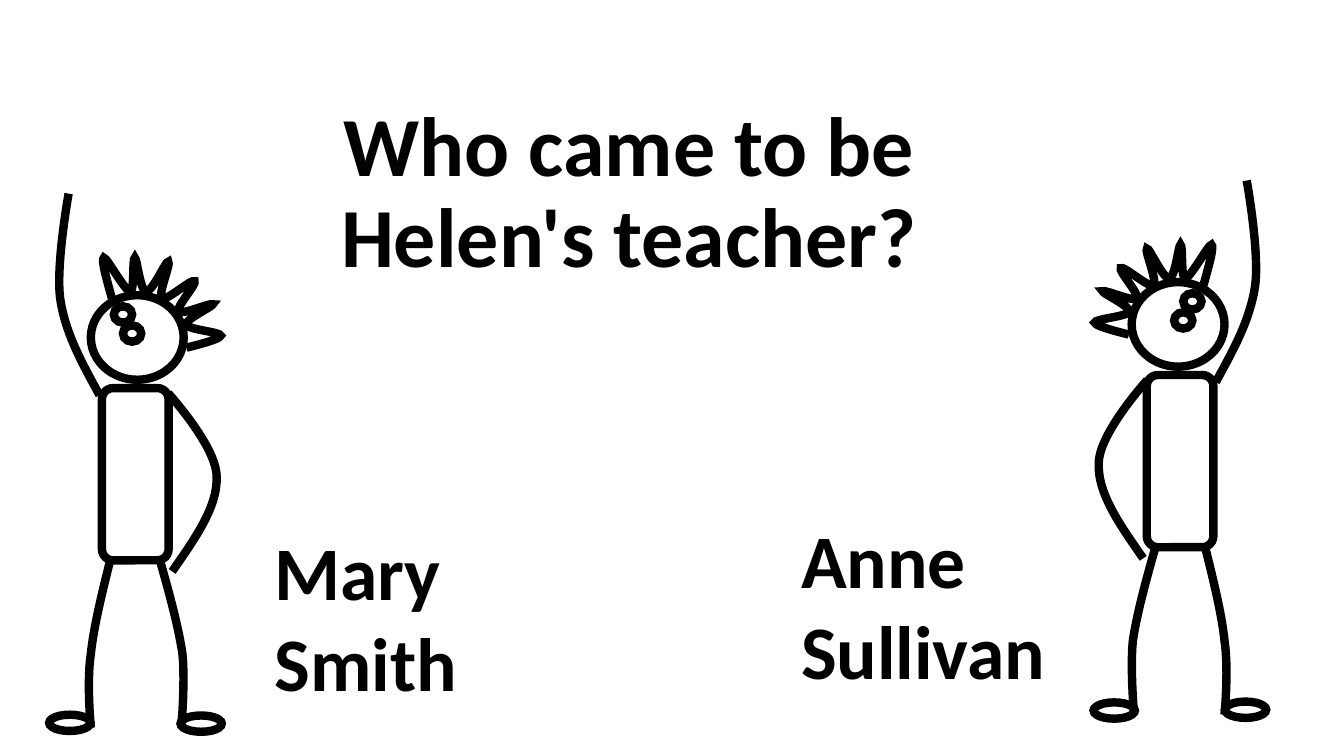
from dataclasses import dataclass

from lxml import etree
from pptx import Presentation
from pptx.dml.color import RGBColor
from pptx.enum.shapes import MSO_SHAPE
from pptx.enum.text import MSO_ANCHOR, MSO_AUTO_SIZE, PP_ALIGN
from pptx.oxml.ns import qn
from pptx.util import Cm, Pt

ELLIPSE, ROUNDED = MSO_SHAPE.OVAL, MSO_SHAPE.ROUNDED_RECTANGLE
CENTER, LEFT = PP_ALIGN.CENTER, PP_ALIGN.LEFT
MIDDLE = MSO_ANCHOR.MIDDLE
NO_FIT, GROW = MSO_AUTO_SIZE.NONE, MSO_AUTO_SIZE.SHAPE_TO_FIT_TEXT


@dataclass(frozen=True)
class Theme:
    ink: RGBColor = RGBColor(0, 0, 0)
    font: str = "Calibri"
    title_size: Pt = Pt(60)
    name_size: Pt = Pt(54)
    stroke: Pt = Pt(6)


theme = Theme()


def style_text(frame, size, alignment):
    for paragraph in frame.paragraphs:
        paragraph.alignment = alignment
        for run in paragraph.runs:
            run.font.name = theme.font
            run.font.size = size
            run.font.bold = True
            run.font.color.rgb = theme.ink


def style_outline(part):
    part.shadow.inherit = False
    part.fill.background()
    part.line.color.rgb = theme.ink
    part.line.width = theme.stroke
    etree.SubElement(part.line._get_or_add_ln(), qn("a:miter"), lim="800000")


deck = Presentation()
deck.slide_width, deck.slide_height = Cm(33.87), Cm(19.05)
slide = deck.slides.add_slide(deck.slide_layouts[5])

# Question
question = slide.shapes.title
question.left, question.top = Cm(5.03), Cm(1.9)
question.width, question.height = Cm(21.64), Cm(6.02)
question_frame = question.text_frame
question_frame.text = "Who came to be Helen's teacher?"
question_frame.word_wrap = True
question_frame.auto_size = NO_FIT
question_frame.vertical_anchor = MIDDLE
question_frame.margin_left = question_frame.margin_right = Cm(0.33)
question_frame.margin_top = question_frame.margin_bottom = Cm(0.18)
question_frame.paragraphs[0].line_spacing = 0.9
style_text(question_frame, theme.title_size, CENTER)

# Two possible answers
answers = [
    ("Mary \nSmith", 6.63, 13.11, 5.18, CENTER),
    ("Anne\nSullivan", 19.94, 12.8, 6.73, LEFT),
]
for answer, left, top, width, alignment in answers:
    answer_box = slide.shapes.add_textbox(Cm(left), Cm(top), Cm(width), Cm(4.88))
    answer_frame = answer_box.text_frame
    answer_frame.text = answer
    answer_frame.word_wrap = False
    answer_frame.auto_size = GROW
    style_text(answer_frame, theme.name_size, alignment)

# Stick figure in cm: kind, left, top, width, height
solids = [
    (ROUNDED, 2.57, 9.78, 1.68, 4.34),  # body
    (ELLIPSE, 1.24, 18.01, 1.04, 0.41),  # feet
    (ELLIPSE, 4.55, 18.03, 1.04, 0.41),
    (ELLIPSE, 2.29, 7.44, 2.34, 2.13),  # head
    (ELLIPSE, 2.87, 7.72, 0.46, 0.41),  # eyes
    (ELLIPSE, 3.1, 8.2, 0.46, 0.41),
]

# Curves in cm: a start, then two control points and an end per segment
outer_leg = [(2.77, 14.15), (2.57, 14.96), (2.36, 15.8), (2.29, 16.48),
             (2.18, 17.2), (2.29, 18.34), (2.29, 18.34)]
inner_leg = [(4.04, 14.15), (4.27, 14.96), (4.5, 15.8), (4.6, 16.48),
             (4.67, 17.2), (4.57, 18.34), (4.57, 18.34)]
hip_arm = [(4.34, 14.4), (4.9, 13.59), (5.49, 12.78), (5.46, 12.01),
           (5.46, 11.25), (4.24, 9.91), (4.24, 9.91)]
raised_arm = [(2.51, 9.96), (2.08, 9.17), (1.65, 8.41), (1.52, 7.54),
              (1.4, 6.71), (1.73, 4.88), (1.73, 4.88)]
hair = [
    (2.82, 7.52),
    (2.69, 7.04), (2.54, 6.53), (2.62, 6.5),
    (2.69, 6.48), (3.15, 7.34), (3.28, 7.34),
    (3.4, 7.34), (3.33, 6.5), (3.4, 6.5),
    (3.45, 6.5), (3.53, 7.32), (3.68, 7.34),
    (3.84, 7.37), (4.19, 6.55), (4.24, 6.6),
    (4.32, 6.63), (3.96, 7.44), (4.09, 7.52),
    (4.19, 7.59), (4.85, 7.01), (4.9, 7.09),
    (4.98, 7.14), (4.42, 7.75), (4.5, 7.85),
    (4.57, 7.95), (5.31, 7.62), (5.36, 7.67),
    (5.38, 7.72), (4.65, 8.05), (4.7, 8.18),
    (4.72, 8.31), (5.56, 8.36), (5.56, 8.46),
    (5.56, 8.56), (4.7, 8.76), (4.7, 8.76),
]
curves = [outer_leg, inner_leg, hip_arm, raised_arm, hair]

# Left figure, then its mirror image on the right, slightly higher
MIRROR_SPAN = 33.15
for mirrored, rise in [(False, 0), (True, 0.33)]:
    figure = slide.shapes.add_group_shape().shapes

    for kind, left, top, width, height in solids:
        if mirrored:
            left = MIRROR_SPAN - left - width
        solid = figure.add_shape(kind, Cm(left), Cm(top - rise), Cm(width), Cm(height))
        style_outline(solid)

    for curve in curves:
        points = [(Cm(MIRROR_SPAN - x if mirrored else x), Cm(y - rise))
                  for x, y in curve]
        builder = figure.build_freeform(*points[0])
        builder.add_line_segments(points[1:], close=False)
        limb = builder.convert_to_shape()
        style_outline(limb)

        # Turn every three straight steps into one Bézier segment
        outline = limb._element.find(".//" + qn("a:path"))
        steps = outline.findall(qn("a:lnTo"))
        for first in range(0, len(steps), 3):
            bezier = etree.SubElement(outline, qn("a:cubicBezTo"))
            for step in steps[first:first + 3]:
                bezier.append(step[0])
                outline.remove(step)

deck.save("out.pptx")
